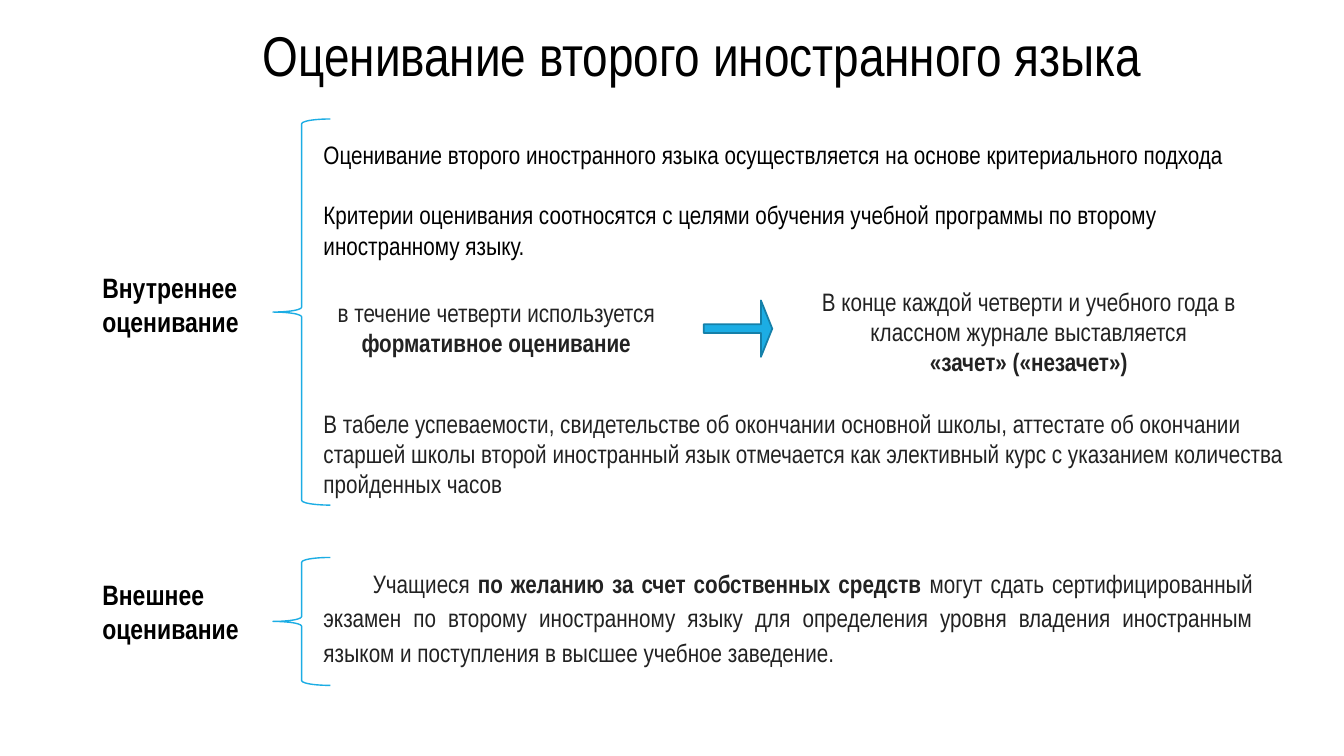
from pptx import Presentation
from pptx import util as u
from pptx.dml import color
from pptx.enum import shapes, text

COLORS = {"black": "000000", "body": "222222", "accent": "1CADE4", "edge": "1580A9"}


class AssessmentSlide:
    font = "Arial Narrow"

    def __init__(self, slide):
        self.slide = slide

    def rgb(self, name):
        return color.RGBColor.from_string(COLORS[name])

    def place(self, box):
        return [u.Pt(length) for length in box]

    def words(self, box, paragraphs, size=18, ink="body", wrap=True, indent=0, **layout):
        frame = self.slide.shapes.add_textbox(*self.place(box)).text_frame
        frame.word_wrap = wrap
        frame.auto_size = text.MSO_AUTO_SIZE.SHAPE_TO_FIT_TEXT
        for index, runs in enumerate(paragraphs):
            paragraph = frame.add_paragraph() if index else frame.paragraphs[0]
            gap = layout.get("space_before") if index else None
            for key, value in {**layout, "space_before": gap}.items():
                setattr(paragraph, key, value)
            if indent:
                paragraph._p.get_or_add_pPr().set("indent", str(u.Pt(indent)))
            for wording, bold in runs:
                run = paragraph.add_run()
                run.text = wording
                style = {"name": self.font, "size": u.Pt(size), "bold": bold}
                for key, value in style.items():
                    setattr(run.font, key, value)
                run.font.color.rgb = self.rgb(ink)

    def preset(self, kind, box, edge, weight, fill=None, adjustments=()):
        figure = self.slide.shapes.add_shape(kind, *self.place(box))
        figure.shadow.inherit = False
        if fill:
            figure.fill.solid()
            figure.fill.fore_color.rgb = self.rgb(fill)
        else:
            figure.fill.background()
        figure.line.color.rgb = self.rgb(edge)
        figure.line.width = u.Pt(weight)
        for index, value in enumerate(adjustments):
            figure.adjustments[index] = value

    def section(self, label, label_top, brace_top, brace_height):
        self.preset(shapes.MSO_SHAPE.LEFT_BRACE, (195, brace_top, 41, brace_height), "accent", 1)
        self.words((66, label_top, 170, 55.5), [[(label, True)]], size=20, ink="black")


def main():
    deck = Presentation()
    deck.slide_width, deck.slide_height = u.Pt(960), u.Pt(540)
    page = AssessmentSlide(deck.slides.add_slide(deck.slide_layouts[6]))
    centre = text.PP_ALIGN.CENTER
    text_left = 224

    page.words((180.7, 10.8, 651.6, 55.5), [[("Оценивание второго иностранного языка", False)]],
               size=40, ink="black", wrap=False)

    page.section("Внутреннее оценивание", 190, 85, 275.8)
    page.words((text_left, 95.8, 678, 94.3), [
        [("Оценивание второго иностранного языка осуществляется на основе критериального подхода", False)],
        [("Критерии оценивания соотносятся с целями обучения учебной программы по второму "
          "иностранному языку.", False)],
    ], ink="black", space_before=u.Pt(21.6))
    page.words((203, 208.8, 303, 51), [
        [("в течение четверти используется ", False), ("формативное оценивание", True)],
    ], alignment=centre)
    page.preset(shapes.MSO_SHAPE.RIGHT_ARROW, (502.6, 214.6, 49, 40.3), "edge", 1.25,
                fill="accent", adjustments=(0.152, 0.201))
    page.words((567.4, 200.9, 334.8, 72.7), [
        [("В конце каждой четверти и учебного года в классном журнале выставляется", False)],
        [("«зачет» («незачет»)", True)],
    ], alignment=centre)
    page.words((text_left, 288, 712.8, 72.7), [
        [("В табеле успеваемости, свидетельстве об окончании основной школы, аттестате об окончании "
          "старшей школы второй иностранный язык отмечается как элективный курс с указанием "
          "количества пройденных часов", False)],
    ])

    page.section("Внешнее оценивание", 409, 398.2, 91.4)
    page.words((text_left, 398.9, 678, 82.8), [
        [("Учащиеся ", False),
         ("по желанию за счет собственных средств ", True),
         ("могут сдать сертифицированный экзамен по второму иностранному языку для определения "
          "уровня владения иностранным языком и поступления в высшее учебное заведение.", False)],
    ], indent=35.3, alignment=text.PP_ALIGN.JUSTIFY, line_spacing=1.15, space_after=u.Pt(6))

    deck.save("out.pptx")


if __name__ == "__main__":
    main()
